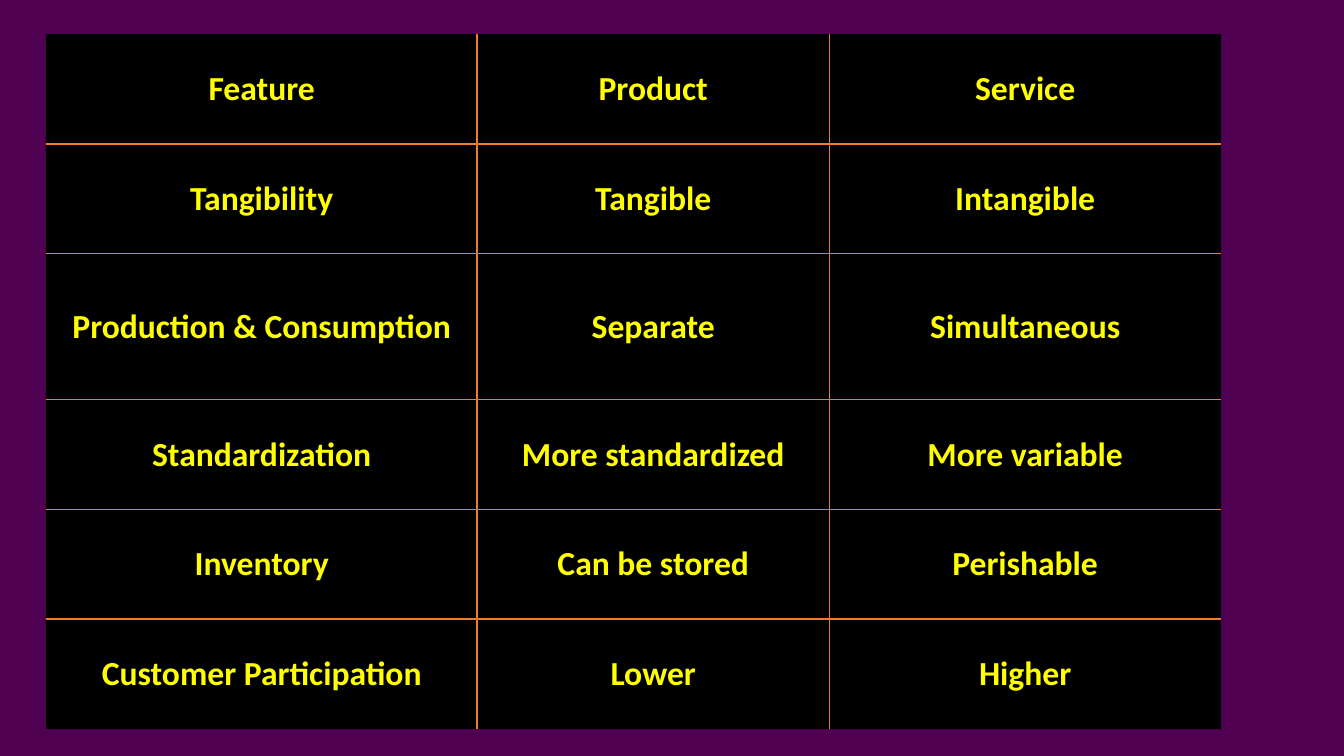
from dataclasses import dataclass

import pptx
import pptx.dml.color
import pptx.enum.text
import pptx.oxml.ns
import pptx.table
import pptx.util
from lxml import etree

PURPLE = pptx.dml.color.RGBColor(0x50, 0x00, 0x50)
BLACK = pptx.dml.color.RGBColor(0x00, 0x00, 0x00)
YELLOW = pptx.dml.color.RGBColor(0xFF, 0xFF, 0x00)
ORANGE = pptx.dml.color.RGBColor(0xED, 0x7D, 0x31)

# Table frame in inches, and its grid in units
LEFT, TOP, WIDTH, HEIGHT = 0.46, 0.34, 11.65, 6.89
COLUMN_UNITS = (11, 9, 10)
ROW_UNITS = (3, 3, 4, 3, 3, 3)


@dataclass(frozen=True)
class Comparison:
    feature: str
    product: str
    service: str


COMPARISONS = (
    Comparison("Feature", "Product", "Service"),
    Comparison("Tangibility", "Tangible", "Intangible"),
    Comparison("Production & Consumption", "Separate", "Simultaneous"),
    Comparison("Standardization", "More standardized", "More variable"),
    Comparison("Inventory", "Can be stored", "Perishable"),
    Comparison("Customer Participation", "Lower", "Higher"),
)


def add_border(cell: pptx.table._Cell, side: str, visible: bool) -> None:
    qn = pptx.oxml.ns.qn
    tc_pr = cell._tc.get_or_add_tcPr()
    ln = etree.SubElement(tc_pr, qn(f"a:ln{side}"), w=str(pptx.util.Pt(1)))
    if visible:
        fill = etree.SubElement(ln, qn("a:solidFill"))
        etree.SubElement(fill, qn("a:srgbClr"), val=str(ORANGE))
    else:
        etree.SubElement(ln, qn("a:noFill"))


def fill_cell(cell: pptx.table._Cell, text: str, inner: dict[str, bool]) -> None:
    # Borders come before the fill in the cell properties
    for side, visible in inner.items():
        add_border(cell, side, visible)
    cell.fill.solid()
    cell.fill.fore_color.rgb = BLACK
    cell.vertical_anchor = pptx.enum.text.MSO_ANCHOR.MIDDLE
    p = cell.text_frame.paragraphs[0]
    p.alignment = pptx.enum.text.PP_ALIGN.CENTER
    r = p.add_run()
    r.text = text
    r.font.name = "Calibri"
    r.font.size = pptx.util.Pt(24)
    r.font.bold = True
    r.font.color.rgb = YELLOW


def main() -> None:
    prs = pptx.Presentation()
    prs.slide_width = pptx.util.Inches(13.33)
    prs.slide_height = pptx.util.Inches(7.5)
    s = prs.slides.add_slide(prs.slide_layouts[6])

    # Background
    s.background.fill.solid()
    s.background.fill.fore_color.rgb = PURPLE

    # Table grid
    frame = (pptx.util.Inches(v) for v in (LEFT, TOP, WIDTH, HEIGHT))
    table = s.shapes.add_table(len(ROW_UNITS), len(COLUMN_UNITS), *frame).table
    for column, units in zip(table.columns, COLUMN_UNITS):
        column.width = pptx.util.Inches(WIDTH * units / sum(COLUMN_UNITS))
    for row, units in zip(table.rows, ROW_UNITS):
        row.height = pptx.util.Inches(HEIGHT * units / sum(ROW_UNITS))

    # Cells, with lines only between them
    last_row, last_col = len(ROW_UNITS) - 1, len(COLUMN_UNITS) - 1
    for i, item in enumerate(COMPARISONS):
        for j, text in enumerate((item.feature, item.product, item.service)):
            inner = {"L": j > 0, "R": j < last_col, "T": i > 0, "B": i < last_row}
            fill_cell(table.cell(i, j), text, inner)

    prs.save("out.pptx")


if __name__ == "__main__":
    main()
